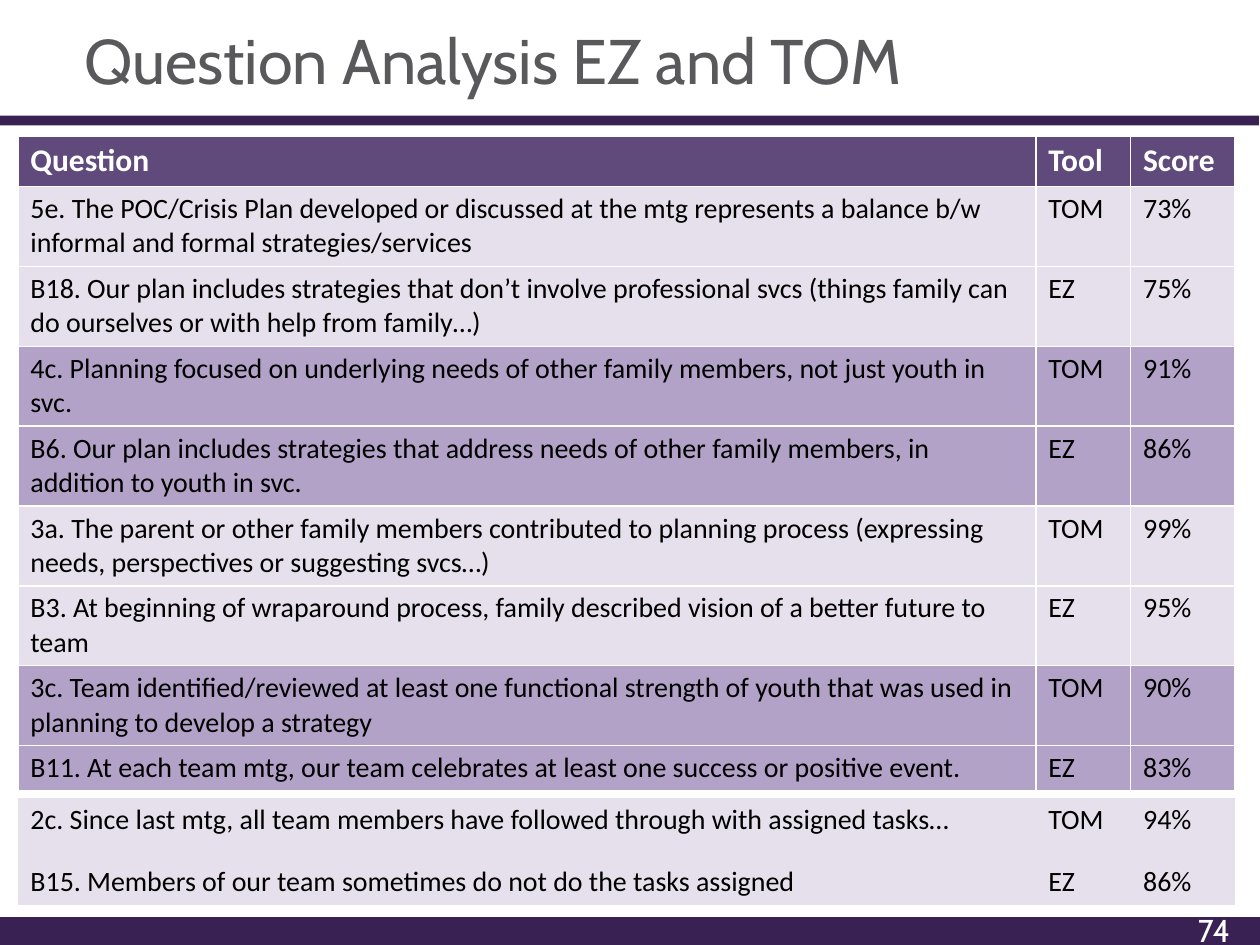
import pptx
import pptx.dml.color
import pptx.enum.shapes
import pptx.enum.text
import pptx.oxml
import pptx.oxml.ns
import pptx.util

Cm = pptx.util.Cm
Pt = pptx.util.Pt
RGBColor = pptx.dml.color.RGBColor

BAR = RGBColor(0x3A, 0x21, 0x54)
GREY = RGBColor(0x59, 0x59, 0x5B)
WHITE = RGBColor(0xFF, 0xFF, 0xFF)
BLACK = RGBColor(0x00, 0x00, 0x00)
HEADER = RGBColor(0x60, 0x4A, 0x7B)
LIGHT = RGBColor(0xE6, 0xE0, 0xEC)
MEDIUM = RGBColor(0xB3, 0xA2, 0xC7)

TITLE = "Question Analysis EZ and TOM"
PAGE_NUMBER = "74"
HEADINGS = ("Question", "Tool", "Score")
QUESTIONS = [
    ("5e. The POC/Crisis Plan developed or discussed at the mtg represents a balance b/w "
     "informal and formal strategies/services", "TOM", "73%"),
    ("B18. Our plan includes strategies that don’t involve professional svcs (things family can "
     "do ourselves or with help from family…)", "EZ", "75%"),
    ("4c. Planning focused on underlying needs of other family members, not just youth in svc.",
     "TOM", "91%"),
    ("B6. Our plan includes strategies that address needs of other family members, in addition "
     "to youth in svc.", "EZ", "86%"),
    ("3a. The parent or other family members contributed to planning process (expressing needs, "
     "perspectives or suggesting svcs…)", "TOM", "99%"),
    ("B3. At beginning of wraparound process, family described vision of a better future to team",
     "EZ", "95%"),
    ("3c. Team identified/reviewed at least one functional strength of youth that was used in "
     "planning to develop a strategy", "TOM", "90%"),
    ("B11. At each team mtg, our team celebrates at least one success or positive event.",
     "EZ", "83%"),
]
TASK_QUESTIONS = [
    ("2c. Since last mtg, all team members have followed through with assigned tasks…",
     "TOM", "94%"),
    ("B15. Members of our team sometimes do not do the tasks assigned", "EZ", "86%"),
]

TABLE_LEFT = 0.36
COLUMN_WIDTHS = (20.52, 1.91, 2.11)
QUESTION_HEIGHTS = [1.02] + [1.61] * 7 + [0.92]
TASK_HEIGHTS = [1.24, 0.93]


def write(frame, text, *, size, color, font="Calibri", bold=False, spacing=None):
    para = frame.paragraphs[0]
    para.alignment = pptx.enum.text.PP_ALIGN.LEFT
    para.line_spacing = spacing
    span = para.add_run()
    span.text = text
    span.font.name = font
    span.font.size = Pt(size)
    span.font.bold = bold
    span.font.color.rgb = color


def clear_margins(frame):
    frame.margin_left = frame.margin_top = frame.margin_right = frame.margin_bottom = 0
    frame.vertical_anchor = pptx.enum.text.MSO_ANCHOR.TOP


def set_borders(cell, visible):
    """Give all four sides a thin white line, or none."""
    namespace = pptx.oxml.ns.nsdecls("a")
    line = f'<a:solidFill><a:srgbClr val="{WHITE}"/></a:solidFill>' if visible else "<a:noFill/>"
    properties = cell._tc.get_or_add_tcPr()
    for position, side in enumerate(("lnL", "lnR", "lnT", "lnB")):
        border = f'<a:{side} {namespace} w="{Pt(1)}">{line}</a:{side}>'
        properties.insert(position, pptx.oxml.parse_xml(border))


def add_bar(page, left, top, height):
    bar = page.shapes.add_shape(pptx.enum.shapes.MSO_SHAPE.RECTANGLE,
                                Cm(left), Cm(top), Cm(25.4), Cm(height))
    bar.shadow.inherit = False
    bar.fill.solid()
    bar.fill.fore_color.rgb = BAR
    bar.line.fill.background()


def add_question_table(page, top, rows, heights, fills, *, header=False, borders=False):
    table = page.shapes.add_table(len(rows), len(COLUMN_WIDTHS), Cm(TABLE_LEFT), Cm(top),
                                  Cm(sum(COLUMN_WIDTHS)), Cm(sum(heights))).table
    table.first_row = header
    table.horz_banding = False
    for column, width in zip(table.columns, COLUMN_WIDTHS):
        column.width = Cm(width)
    for index, (row, values) in enumerate(zip(table.rows, rows)):
        row.height = Cm(heights[index])
        is_heading = header and index == 0
        for cell, value in zip(row.cells, values):
            cell.margin_top = cell.margin_bottom = Cm(0.11)
            cell.fill.solid()
            cell.fill.fore_color.rgb = fills[index]
            set_borders(cell, borders)
            write(cell.text_frame, value, size=18 if is_heading else 16,
                  color=WHITE if is_heading else BLACK, bold=is_heading)


def main():
    deck = pptx.Presentation()
    deck.slide_width, deck.slide_height = Cm(25.4), Cm(19.05)
    page = deck.slides.add_slide(deck.slide_layouts[5])

    add_bar(page, 0, 18.49, 0.56)
    add_bar(page, -0.02, 2.33, 0.2)

    title = page.shapes.title
    title.left, title.top, title.width, title.height = Cm(1.7), Cm(0.43), Cm(23.7), Cm(1.57)
    clear_margins(title.text_frame)
    write(title.text_frame, TITLE, size=36, color=GREY, font="Cabin")

    number = page.shapes.add_textbox(Cm(24.15), Cm(18.49), Cm(0.8), Cm(0.56)).text_frame
    clear_margins(number)
    number.word_wrap = True
    write(number, PAGE_NUMBER, size=18, color=WHITE, font="Cabin", spacing=Pt(18.1))

    pair_fills = [(LIGHT, MEDIUM)[index // 2 % 2] for index in range(len(QUESTIONS))]
    add_question_table(page, 2.74, [HEADINGS] + QUESTIONS, QUESTION_HEIGHTS,
                       [HEADER] + pair_fills, header=True, borders=True)
    add_question_table(page, 16.08, TASK_QUESTIONS, TASK_HEIGHTS, [LIGHT] * len(TASK_QUESTIONS))

    deck.save("out.pptx")


if __name__ == "__main__":
    main()
